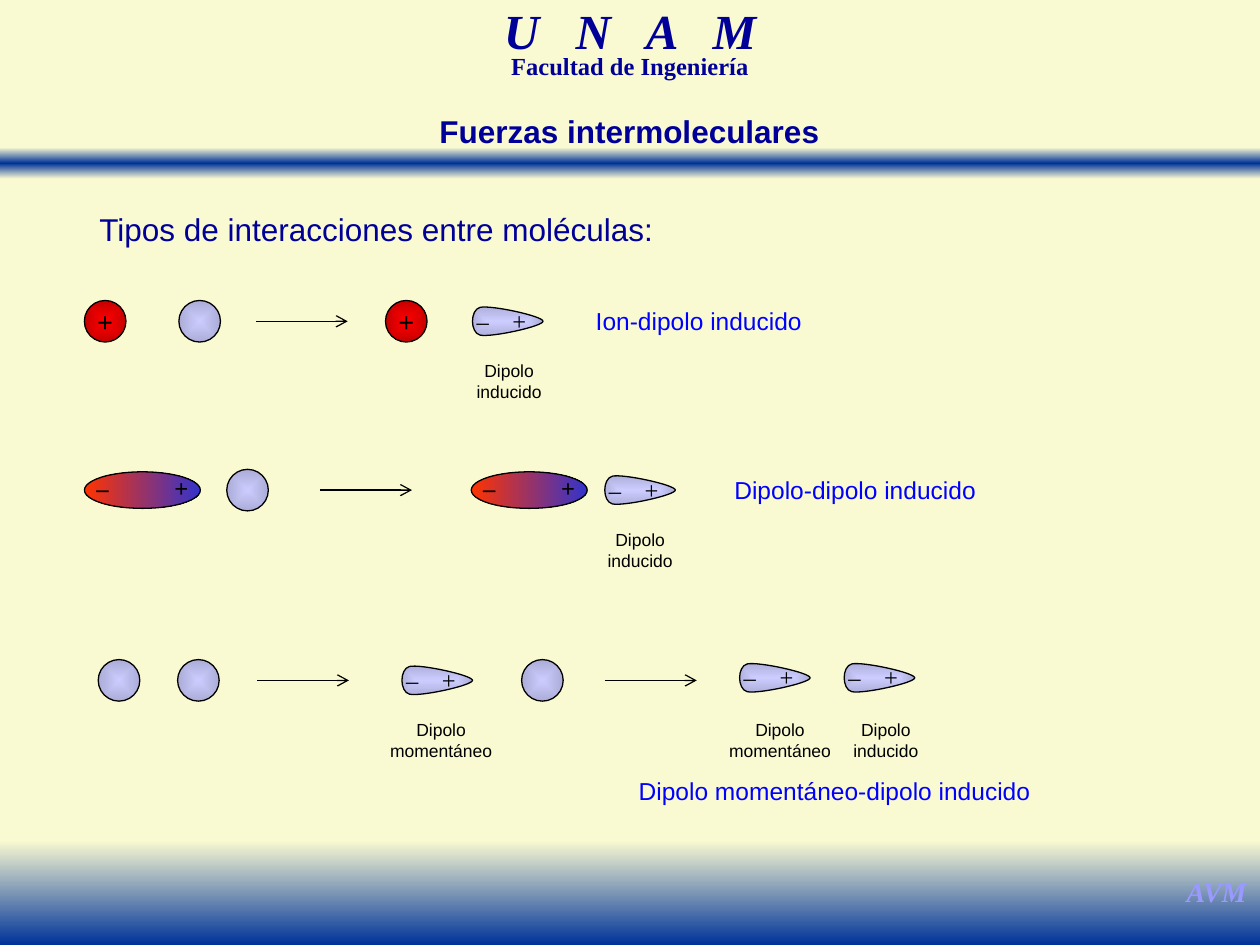
from dataclasses import dataclass

from lxml import etree
from pptx import Presentation
from pptx.dml.color import RGBColor
from pptx.enum.shapes import MSO_CONNECTOR, MSO_SHAPE
from pptx.enum.text import MSO_ANCHOR, PP_ALIGN
from pptx.oxml import parse_xml
from pptx.oxml.ns import nsdecls, qn
from pptx.util import Inches, Pt

LEFT, CENTER, JUSTIFY = PP_ALIGN.LEFT, PP_ALIGN.CENTER, PP_ALIGN.JUSTIFY
MIDDLE = MSO_ANCHOR.MIDDLE
OVAL, RECT = MSO_SHAPE.OVAL, MSO_SHAPE.RECTANGLE
STRAIGHT = MSO_CONNECTOR.STRAIGHT


@dataclass(frozen=True)
class Theme:
    sans: str = "Arial"
    serif: str = "Times New Roman"
    cream: str = "FAFAD2"
    band: str = "003399"
    navy: str = "000099"
    blue: str = "0000FF"
    lilac: str = "9999FF"
    ink: str = "000000"
    ion: tuple = ("FF0000", "C50000")
    neutral: tuple = ("CCCCFF", "ACACD7")
    polar: tuple = ("FF3300", "3333CC")
    school: int = 28
    title: int = 18
    sign: int = 16
    body: int = 14
    caption: int = 10
    outline: float = 0.75


THEME = Theme()
SPHERE = 0.33
DIPOLE_W, DIPOLE_H = 0.92, 0.29
ARROW = 0.73
# Drop outline from blunt end to tip: start point, then three Bezier curves
DROP_START = (0.06, -0.11)
DROP_CURVES = [
    (-0.02, -0.09), (-0.02, 0.09), (0.06, 0.11),
    (0.15, 0.13), (0.56, 0.04), (0.56, 0),
    (0.56, -0.04), (0.15, -0.13), DROP_START,
]


def style(paragraph, size, color, font=THEME.sans, bold=False, italic=False,
          align=LEFT):
    paragraph.alignment = align
    paragraph.font.name = font
    paragraph.font.size = Pt(size)
    paragraph.font.bold = bold
    paragraph.font.italic = italic
    paragraph.font.color.rgb = RGBColor.from_string(color)


def add_text(slide, box, lines, size, color, wrap=True, **look):
    frame = slide.shapes.add_textbox(*map(Inches, box)).text_frame
    frame.word_wrap = wrap
    frame.text = lines
    for paragraph in frame.paragraphs:
        style(paragraph, size, color, **look)
    return frame.paragraphs[0]


def paint(shape, colors, direction, outlined=True):
    """Fill with evenly spaced gradient stops and draw the outline."""
    stops = "".join(
        f'<a:gs pos="{100000 * i // (len(colors) - 1)}">'
        f'<a:srgbClr val="{color}"/></a:gs>' for i, color in enumerate(colors))
    if isinstance(direction, int):
        course = f'<a:lin ang="{direction * 60000}" scaled="0"/>'
    else:
        course = (f'<a:path path="{direction}"><a:fillToRect l="50000" t="50000" '
                  'r="50000" b="50000"/></a:path>')
    gradient = parse_xml(f'<a:gradFill {nsdecls("a")} rotWithShape="1">'
                         f'<a:gsLst>{stops}</a:gsLst>{course}</a:gradFill>')
    shape.element.spPr[1].addnext(gradient)  # follows the geometry
    shape.shadow.inherit = False
    if outlined:
        shape.line.color.rgb = RGBColor.from_string(THEME.ink)
        shape.line.width = Pt(THEME.outline)
    else:
        shape.line.fill.background()


def write_charges(frame, spacing, bold=False):
    """A minus and a plus sign, set apart by character spacing in points."""
    frame.word_wrap = False
    frame.vertical_anchor = MIDDLE
    signs = frame.paragraphs[0]
    minus, plus = signs.add_run(), signs.add_run()
    minus.text, plus.text = "– ", "+"
    minus.font._element.set("spc", str(spacing * 100))
    style(signs, THEME.body, THEME.ink, THEME.serif, bold, align=CENTER)


def add_oval(slide, left, y, width, height):
    return slide.shapes.add_shape(OVAL, Inches(left), Inches(y - height / 2),
                                  Inches(width), Inches(height))


def add_sphere(slide, left, y, colors=THEME.neutral, sign=""):
    sphere = add_oval(slide, left, y, SPHERE, SPHERE)
    paint(sphere, colors, "shape")
    if sign:
        frame = sphere.text_frame
        frame.word_wrap = False
        frame.vertical_anchor = MIDDLE
        frame.text = sign
        style(frame.paragraphs[0], THEME.sign, THEME.ink, THEME.serif, True,
              align=CENTER)


def add_ion(slide, left, y):
    add_sphere(slide, left, y, THEME.ion, "+")


def add_dipole(slide, left, y):
    dipole = add_oval(slide, left, y, DIPOLE_W, DIPOLE_H)
    paint(dipole, THEME.polar, 0)
    dipole.text_frame.margin_bottom = Inches(0.09)
    write_charges(dipole.text_frame, 17, bold=True)


def add_drop(slide, left, y):
    """A deformed molecule with its charges."""
    def place(point):
        return Inches(left + point[0]), Inches(y + point[1])

    outline = slide.shapes.build_freeform(*place(DROP_START))
    outline.add_line_segments([place(point) for point in DROP_CURVES], close=True)
    drop = outline.convert_to_shape()
    # Join each three straight segments into one curve
    segments = list(drop.element.iter(qn("a:lnTo")))
    for first in range(0, len(DROP_CURVES), 3):
        curve = etree.Element(qn("a:cubicBezTo"))
        segments[first].addprevious(curve)
        for segment in segments[first:first + 3]:
            curve.append(segment[0])
            segment.getparent().remove(segment)
    paint(drop, THEME.neutral, "rect")
    charges = slide.shapes.add_textbox(Inches(left - 0.07), Inches(y - 0.17),
                                       Inches(0.6), Inches(0.33))
    write_charges(charges.text_frame, 5)


def add_caption(slide, center, top, kind, width):
    add_text(slide, (center - width / 2, top, width, 0.44), f"Dipolo\n{kind}",
             THEME.caption, THEME.ink, wrap=False, align=CENTER)


def add_induced(slide, center, top):
    add_caption(slide, center, top, "inducido", 0.72)


def add_momentary(slide, center, top):
    add_caption(slide, center, top, "momentáneo", 1.02)


def add_arrow(slide, left, y):
    arrow = slide.shapes.add_connector(STRAIGHT, Inches(left), Inches(y),
                                       Inches(left + ARROW), Inches(y))
    arrow.line.color.rgb = RGBColor.from_string(THEME.ink)
    arrow.line.width = Pt(THEME.outline)
    etree.SubElement(arrow.line._get_or_add_ln(), qn("a:tailEnd"), type="arrow")
    etree.SubElement(arrow.element.spPr, qn("a:effectLst"))


def add_name(slide, left, top, width, name):
    add_text(slide, (left, top, width, 0.34), name, THEME.body, THEME.blue)


def add_band(slide, top, height, colors):
    band = slide.shapes.add_shape(RECT, 0, Inches(top), Inches(10), Inches(height))
    paint(band, colors, 90, outlined=False)


def add_header(slide):
    add_band(slide, 1.17, 0.25, (THEME.cream, THEME.band, THEME.cream))
    school = add_text(slide, (3.04, 0.08, 3.92, 0.43), "U N A M", THEME.school,
                      THEME.navy, font=THEME.serif, bold=True, italic=True,
                      align=CENTER)
    school.runs[0].font._element.set("spc", "700")
    faculty = add_text(slide, (3.21, 0.42, 3.58, 0.26), "Facultad de Ingeniería",
                       THEME.body, THEME.navy, font=THEME.serif, bold=True,
                       align=CENTER)
    school.line_spacing = faculty.line_spacing = 0.7

    title = slide.shapes.title
    title.left, title.top, title.width, title.height = map(
        Inches, (2.83, 0.84, 4.33, 0.4))
    title.text_frame.text = "Fuerzas intermoleculares"
    title.text_frame.vertical_anchor = MIDDLE
    style(title.text_frame.paragraphs[0], THEME.title, THEME.navy, bold=True,
          align=CENTER)


def add_footer(slide):
    add_band(slide, 6.67, 0.83, (THEME.cream, THEME.band))
    add_text(slide, (9.31, 6.89, 0.69, 0.37), "AVM", THEME.sign, THEME.lilac,
             wrap=False, font=THEME.serif, bold=True, italic=True, align=CENTER)


def add_ion_row(slide, left, y):
    add_ion(slide, left, y)
    add_sphere(slide, left + 0.75, y)
    add_arrow(slide, left + 1.36, y)
    add_ion(slide, left + 2.39, y)
    add_drop(slide, left + 3.08, y)
    add_induced(slide, left + 3.37, y + 0.26)
    add_name(slide, left + 3.96, y - 0.17, 2.36, "Ion-dipolo inducido")


def add_dipole_row(slide, left, y):
    add_dipole(slide, left, y)
    add_sphere(slide, left + 1.13, y)
    add_arrow(slide, left + 1.87, y)
    add_dipole(slide, left + 3.07, y)
    add_drop(slide, left + 4.13, y)
    add_induced(slide, left + 4.41, y + 0.26)
    add_name(slide, left + 5.06, y - 0.17, 2.36, "Dipolo-dipolo inducido")


def add_momentary_row(slide, left, y):
    add_sphere(slide, left, y)
    add_sphere(slide, left + 0.63, y)
    add_arrow(slide, left + 1.26, y)
    add_drop(slide, left + 2.41, y)
    add_momentary(slide, left + 2.72, y + 0.26)
    add_sphere(slide, left + 3.36, y)
    add_arrow(slide, left + 4.02, y)
    add_drop(slide, left + 5.09, y - 0.02)
    add_momentary(slide, left + 5.41, y + 0.26)
    add_drop(slide, left + 5.92, y - 0.02)
    add_induced(slide, left + 6.25, y + 0.26)
    add_name(slide, left + 4.19, y + 0.71, 3.42, "Dipolo momentáneo-dipolo inducido")


def main():
    deck = Presentation()
    deck.slide_width, deck.slide_height = Inches(10), Inches(7.5)
    slide = deck.slides.add_slide(deck.slide_layouts[5])  # title only
    slide.background.fill.solid()
    slide.background.fill.fore_color.rgb = RGBColor.from_string(THEME.cream)
    add_header(slide)
    add_footer(slide)
    add_text(slide, (0.69, 1.62, 5.41, 0.4), "Tipos de interacciones entre moléculas:",
             THEME.title, THEME.navy, align=JUSTIFY)
    add_ion_row(slide, 0.67, 2.55)
    add_dipole_row(slide, 0.67, 3.89)
    add_momentary_row(slide, 0.78, 5.4)
    deck.save("out.pptx")


if __name__ == "__main__":
    main()
